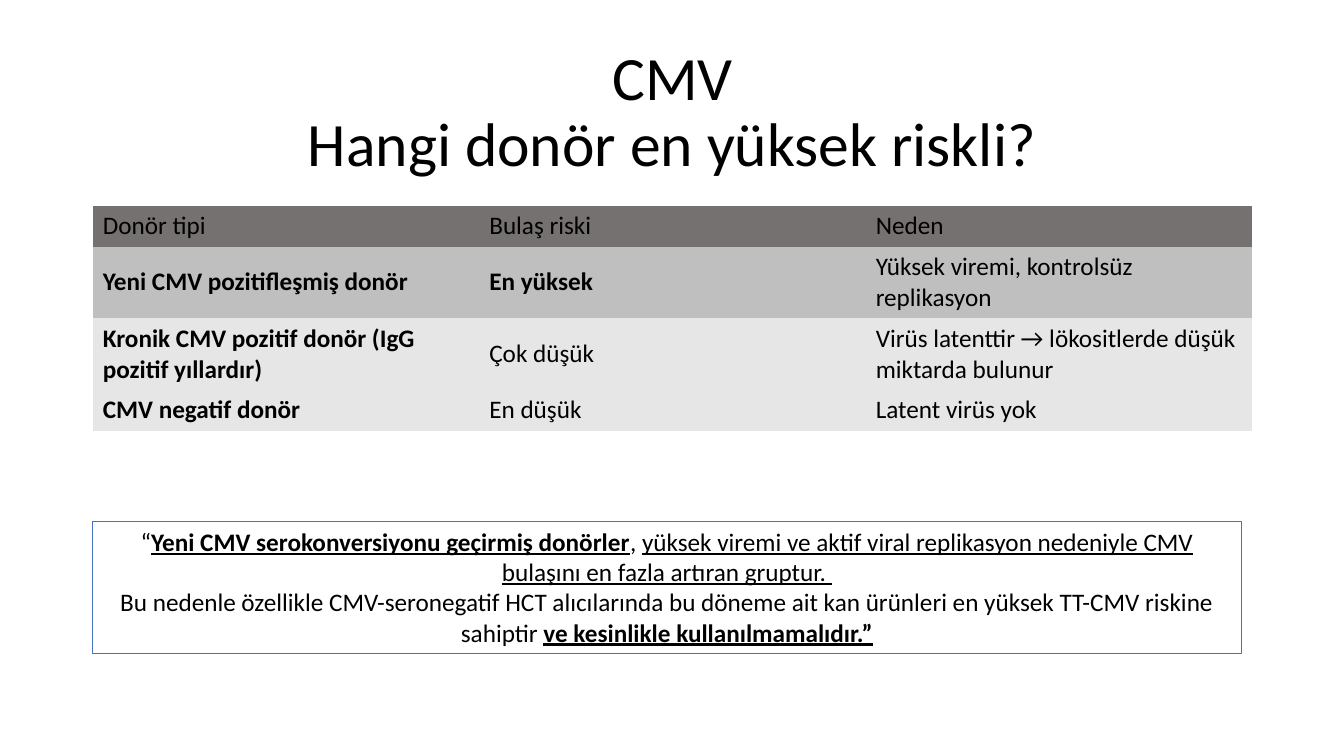
from dataclasses import dataclass

from pptx import Presentation
from pptx.dml.color import RGBColor
from pptx.enum.shapes import MSO_SHAPE
from pptx.enum.text import MSO_ANCHOR, MSO_AUTO_SIZE, PP_ALIGN
from pptx.oxml.ns import qn
from pptx.util import Emu, Pt

CENTER, LEFT = PP_ALIGN.CENTER, PP_ALIGN.LEFT
TOP, MIDDLE = MSO_ANCHOR.TOP, MSO_ANCHOR.MIDDLE
RECTANGLE = MSO_SHAPE.RECTANGLE
FIT_SHAPE, NO_FIT = MSO_AUTO_SIZE.SHAPE_TO_FIT_TEXT, MSO_AUTO_SIZE.NONE
EMU_PER_PX = 9144  # 100 px to the inch
TITLE_ONLY = 5
PLAIN_TABLE_STYLE = "{2D5ABB26-0587-4C30-8999-92F81FD0307C}"


@dataclass(frozen=True)
class Theme:
    font: str = "Calibri"
    title_size: int = 44
    body_size: int = 18
    text: str = "000000"
    header: str = "767171"
    highlight: str = "BFBFBF"
    plain: str = "E7E6E6"
    outline: str = "4472C4"


def px(length):
    return Emu(length * EMU_PER_PX)


class SlideBuilder:
    def __init__(self, deck, theme):
        self.theme = theme
        self.slide = deck.slides.add_slide(deck.slide_layouts[TITLE_ONLY])

    def style(self, span, size, bold=False, underline=False):
        font = span.font
        font.name = self.theme.font
        font.size = Pt(size)
        font.bold = bold
        font.underline = underline
        font.color.rgb = RGBColor.from_string(self.theme.text)

    def title(self, text, left, top, width, height):
        title = self.slide.shapes.title
        title.left, title.top = px(left), px(top)
        title.width, title.height = px(width), px(height)
        frame = title.text_frame
        frame.text = text
        frame.auto_size = NO_FIT
        frame.vertical_anchor = MIDDLE
        para = frame.paragraphs[0]
        para.alignment = CENTER
        para.line_spacing = 0.9
        for span in para.runs:
            self.style(span, self.theme.title_size)

    def table(self, rows, fills, heights, left, top, width):
        """Fill each row with one colour; bold cells are marked in the rows."""
        frame = self.slide.shapes.add_table(
            len(rows), len(rows[0]), px(left), px(top), px(width), px(sum(heights)))
        table = frame.table
        table.first_row = table.horz_banding = False
        for style_id in frame.element.iter(qn("a:tableStyleId")):
            style_id.text = PLAIN_TABLE_STYLE
        for row, fill, height, entries in zip(table.rows, fills, heights, rows):
            row.height = px(height)
            for cell, (text, bold) in zip(row.cells, entries):
                cell.fill.solid()
                cell.fill.fore_color.rgb = RGBColor.from_string(fill)
                cell.vertical_anchor = MIDDLE
                cell.text = text
                para = cell.text_frame.paragraphs[0]
                para.alignment = LEFT
                self.style(para.runs[0], self.theme.body_size, bold)

    def outlined_box(self, paragraphs, left, top, width, height):
        """Each paragraph is a list of (text, bold, underline) spans."""
        box = self.slide.shapes.add_shape(
            RECTANGLE, px(left), px(top), px(width), px(height))
        box.shadow.inherit = False
        box.fill.background()
        box.line.color.rgb = RGBColor.from_string(self.theme.outline)
        box.line.width = Pt(0.75)
        frame = box.text_frame
        frame.word_wrap = True
        frame.auto_size = FIT_SHAPE
        frame.vertical_anchor = TOP
        for index, spans in enumerate(paragraphs):
            para = frame.add_paragraph() if index else frame.paragraphs[0]
            para.alignment = CENTER
            for text, bold, underline in spans:
                span = para.add_run()
                span.text = text
                self.style(span, self.theme.body_size, bold, underline)


DONOR_ROWS = [
    [("Donör tipi", False), ("Bulaş riski", False), ("Neden", False)],
    [("Yeni CMV pozitifleşmiş donör", True), ("En yüksek", True),
     ("Yüksek viremi, kontrolsüz replikasyon", False)],
    [("Kronik CMV pozitif donör (IgG pozitif yıllardır)", True), ("Çok düşük", False),
     ("Virüs latenttir → lökositlerde düşük miktarda bulunur", False)],
    [("CMV negatif donör", True), ("En düşük", False), ("Latent virüs yok", False)],
]

CONCLUSION = [
    [("“", False, False),
     ("Yeni CMV serokonversiyonu geçirmiş donörler", True, True),
     (", ", False, False),
     ("yüksek viremi ve aktif viral replikasyon nedeniyle CMV bulaşını "
      "en fazla artıran gruptur. ", False, True)],
    [("Bu nedenle özellikle CMV-seronegatif HCT alıcılarında bu döneme ait kan "
      "ürünleri en yüksek TT-CMV riskine sahiptir ", False, False),
     ("ve kesinlikle kullanılmamalıdır.”", True, True)],
]


def main():
    deck = Presentation()
    deck.slide_width, deck.slide_height = px(1333), px(750)
    theme = Theme()
    page = SlideBuilder(deck, theme)
    page.title("CMV\vHangi donör en yüksek riskli?", 92, 40, 1150, 145)
    fills = [theme.header, theme.highlight, theme.plain, theme.plain]
    page.table(DONOR_ROWS, fills, [40, 71, 71, 40], 92, 204, 1150)
    page.outlined_box(CONCLUSION, 92, 517, 1139, 131)
    deck.save("out.pptx")


if __name__ == "__main__":
    main()
